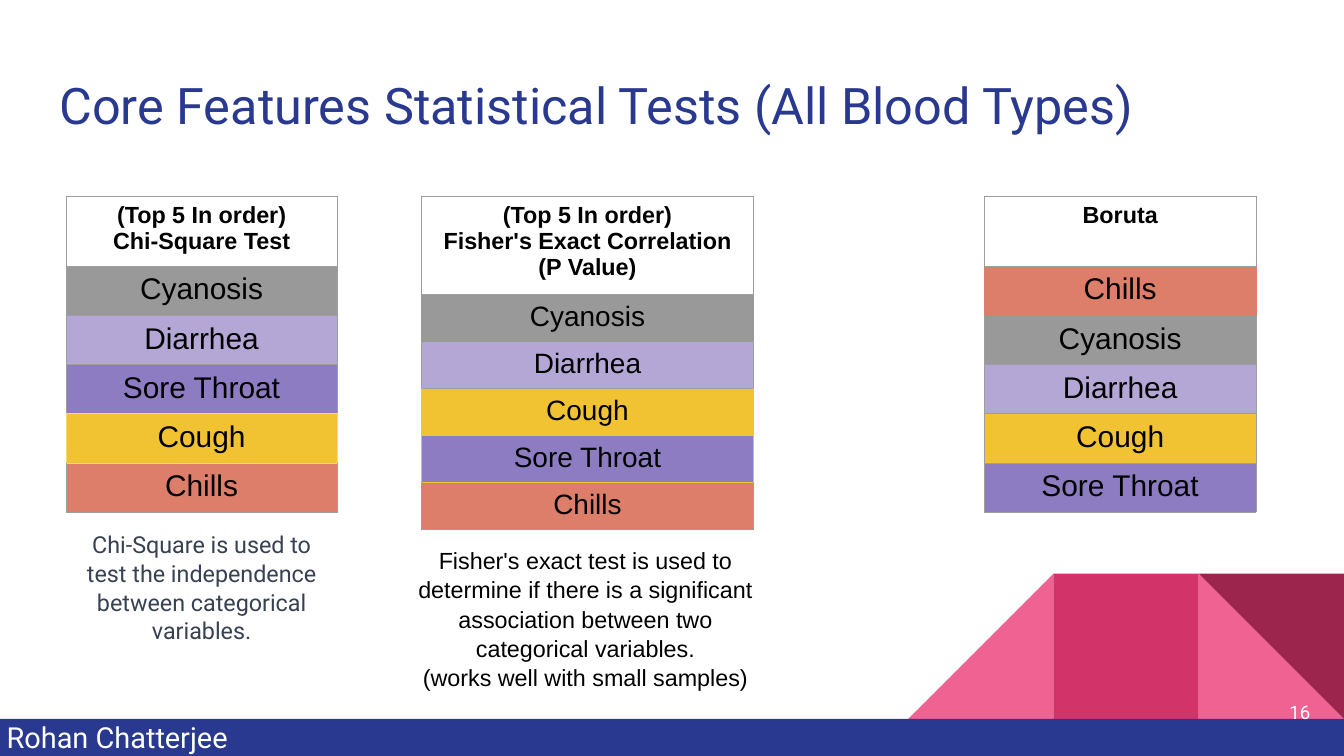
from lxml.etree import SubElement
from pptx import Presentation
from pptx.dml.color import RGBColor
from pptx.enum.shapes import MSO_SHAPE
from pptx.enum.text import MSO_ANCHOR, PP_ALIGN
from pptx.oxml.ns import qn
from pptx.util import Cm, Pt

NAVY, WHITE, BLACK, GRAY = "2A3990", "FFFFFF", "000000", "9E9E9E"
PINK, CORAL, DARK_GRAY = "F06292", "DD7E6B", "999999"
YELLOW, LIGHT_YELLOW = "F1C232", "FFD966"


def color(hex_string):
    return RGBColor.from_string(hex_string)


def write_text(frame, lines, size, font_name, hex_string, alignment,
               margin=0.25, bold=False, spacing=None):
    frame.word_wrap = True
    frame.margin_left = frame.margin_right = Cm(margin)
    frame.margin_top = frame.margin_bottom = Cm(margin)
    for index, line in enumerate(lines):
        paragraph = frame.paragraphs[0] if index == 0 else frame.add_paragraph()
        paragraph.text = line
        paragraph.alignment = alignment
        paragraph.line_spacing = spacing
        paragraph.font.size = Pt(size)
        paragraph.font.name = font_name
        paragraph.font.bold = bold
        paragraph.font.color.rgb = color(hex_string)


presentation = Presentation()
presentation.slide_width = Cm(50.8)
presentation.slide_height = Cm(28.58)
slide = presentation.slides.add_slide(presentation.slide_layouts[5])

side = 5.49
bar_top = 27.18
right_triangle, rectangle = MSO_SHAPE.RIGHT_TRIANGLE, MSO_SHAPE.RECTANGLE
decorations = [
    (right_triangle, 50.8 - side, bar_top - side, side, side, 0, PINK),
    (right_triangle, 50.8 - 3 * side, bar_top - side, side, side, 270, PINK),
    (rectangle, 50.8 - 2 * side, bar_top - side, side, side, 0, "D23369"),
    (right_triangle, 50.8 - side, bar_top - side, side, side, 180, "9C254D"),
    (rectangle, 0, bar_top, 50.8, 1.4, 0, NAVY),
]
for preset, left, top, width, height, rotation, fill in decorations:
    shape = slide.shapes.add_shape(preset, Cm(left), Cm(top), Cm(width), Cm(height))
    shape.rotation = rotation
    shape.shadow.inherit = False
    shape.fill.solid()
    shape.fill.fore_color.rgb = color(fill)
    shape.line.fill.background()

title = slide.shapes.title
title.left, title.top, title.width, title.height = Cm(1.73), Cm(2.29), Cm(47.35), Cm(3.38)
title.text_frame.vertical_anchor = MSO_ANCHOR.TOP
write_text(title.text_frame, ["Core Features Statistical Tests (All Blood Types)"],
           54, "Roboto", NAVY, PP_ALIGN.LEFT, margin=0.51)

symptom_fills = {"Cyanosis": DARK_GRAY, "Diarrhea": "B4A7D6", "Sore Throat": "8E7CC3",
                 "Cough": YELLOW, "Chills": CORAL}
tables = [
    (2.49, 10.26, 2.64, 1.86, 32, ["(Top 5 In order)", "Chi-Square Test"],
     [("Cyanosis", GRAY, GRAY), ("Diarrhea", GRAY, GRAY),
      ("Sore Throat", GRAY, LIGHT_YELLOW), ("Cough", LIGHT_YELLOW, LIGHT_YELLOW),
      ("Chills", GRAY, GRAY)]),
    (15.93, 12.55, 3.7, 1.78, 30,
     ["(Top 5 In order)", "Fisher's Exact Correlation", "(P Value)"],
     [("Cyanosis", DARK_GRAY, DARK_GRAY), ("Diarrhea", GRAY, GRAY),
      ("Cough", YELLOW, YELLOW), ("Sore Throat", YELLOW, YELLOW),
      ("Chills", GRAY, GRAY)]),
    (37.21, 10.26, 2.64, 1.86, 32, ["Boruta"],
     [("Chills", CORAL, CORAL), ("Cyanosis", GRAY, GRAY), ("Diarrhea", GRAY, GRAY),
      ("Cough", GRAY, GRAY), ("Sore Throat", GRAY, GRAY)]),
]
for left, width, header_height, row_height, size, header, symptoms in tables:
    frame = slide.shapes.add_table(
        len(symptoms) + 1, 1, Cm(left), Cm(7.42), Cm(width),
        Cm(header_height + row_height * len(symptoms)))
    table = frame.table
    table.first_row = False
    table.horz_banding = False
    top_border = GRAY
    rows = [(None, GRAY, GRAY)] + symptoms
    for index, (symptom, side_border, bottom_border) in enumerate(rows):
        table.rows[index].height = Cm(row_height if symptom else header_height)
        cell = table.cell(index, 0)
        cell.margin_left = cell.margin_right = Cm(0.25)
        cell.margin_top = cell.margin_bottom = Cm(0.25)
        write_text(cell.text_frame, [symptom] if symptom else header,
                   size if symptom else 25, "Arial", BLACK, PP_ALIGN.CENTER,
                   bold=symptom is None)
        borders = {"a:lnL": side_border, "a:lnR": side_border,
                   "a:lnT": top_border, "a:lnB": bottom_border}
        for tag, border in borders.items():
            line = SubElement(cell._tc.get_or_add_tcPr(), qn(tag), w=str(Pt(0.75)))
            fill = SubElement(line, qn("a:solidFill"))
            SubElement(fill, qn("a:srgbClr"), val=border)
        top_border = bottom_border
        if symptom:
            cell.fill.solid()
            cell.fill.fore_color.rgb = color(symptom_fills[symptom])
        else:
            cell.fill.background()

texts = [
    (46.99, 25.83, 3.05, 2.18, ["16"], 20, "Roboto", WHITE, PP_ALIGN.RIGHT,
     0.51, None, MSO_ANCHOR.MIDDLE),
    (0, 26.95, 12.55, 1.83, ["Rohan Chatterjee"], 31, "Roboto", WHITE, PP_ALIGN.LEFT,
     0.25, None, MSO_ANCHOR.TOP),
    (15.14, 20.37, 13.97, 5.87,
     ["Fisher's exact test is used to determine if there is a significant "
      "association between two categorical variables.",
      "(works well with small samples)"],
     25, "Arial", BLACK, PP_ALIGN.CENTER, 0.25, 1.04, MSO_ANCHOR.TOP),
    (2.49, 19.79, 10.26, 4.8,
     ["Chi-Square is used to test the independence between categorical variables."],
     25, "Roboto", "374151", PP_ALIGN.CENTER, 0.25, 1.02, MSO_ANCHOR.TOP),
]
for (left, top, width, height, lines, size, font_name, text_color,
     alignment, margin, spacing, anchor) in texts:
    box = slide.shapes.add_textbox(Cm(left), Cm(top), Cm(width), Cm(height))
    box.text_frame.vertical_anchor = anchor
    write_text(box.text_frame, lines, size, font_name, text_color, alignment,
               margin=margin, spacing=spacing)

presentation.save("out.pptx")
